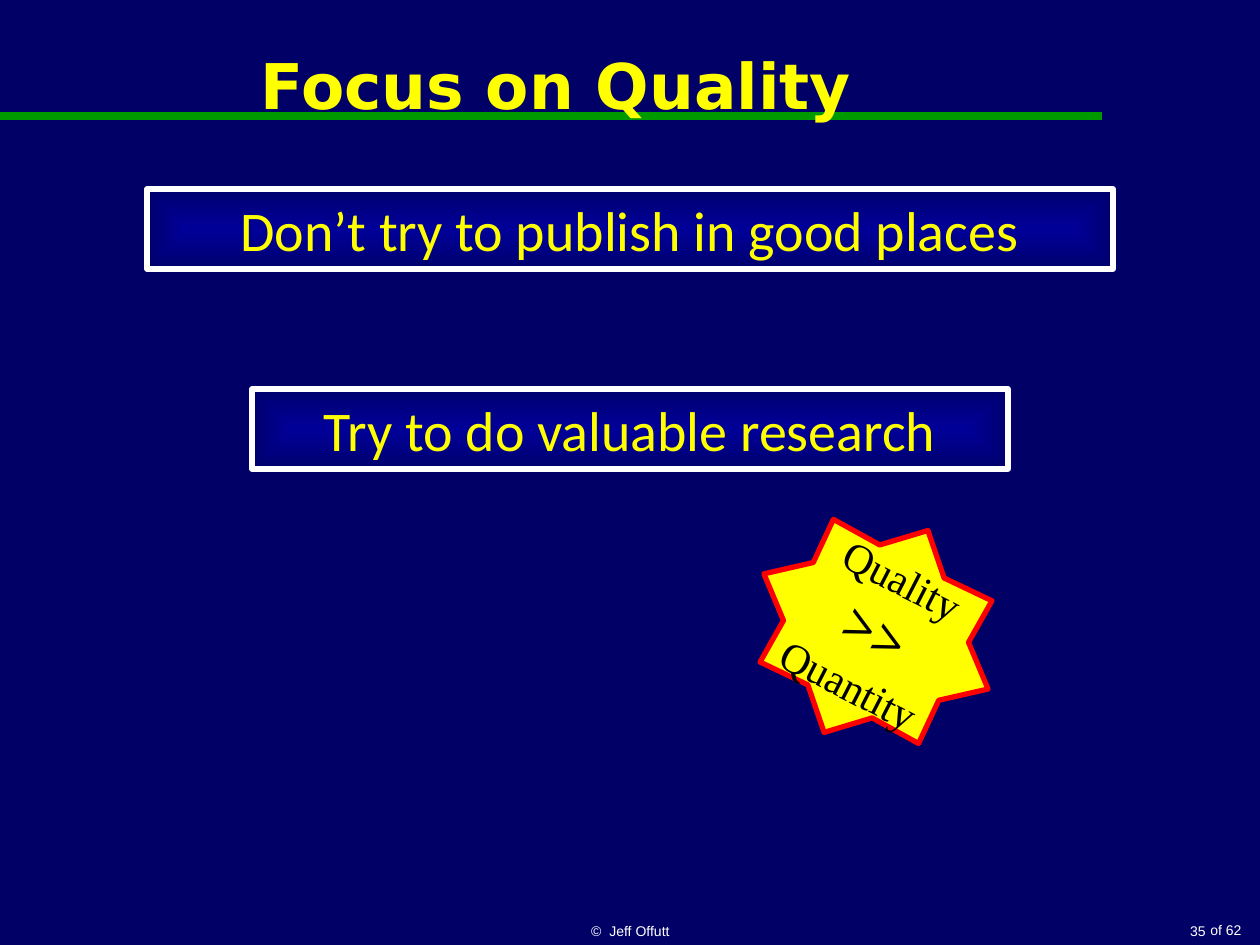
from lxml import etree
from pptx import Presentation
from pptx.dml.color import RGBColor
from pptx.enum.shapes import MSO_CONNECTOR, MSO_SHAPE
from pptx.enum.text import MSO_ANCHOR, PP_ALIGN
from pptx.oxml import parse_xml
from pptx.oxml.ns import qn
from pptx.util import Pt

PX = 914400 / 126
STRAIGHT = MSO_CONNECTOR.STRAIGHT
RECTANGLE, STAR = MSO_SHAPE.RECTANGLE, MSO_SHAPE.STAR_8_POINT
TOP, MIDDLE, BOTTOM = MSO_ANCHOR.TOP, MSO_ANCHOR.MIDDLE, MSO_ANCHOR.BOTTOM
CENTER, RIGHT = PP_ALIGN.CENTER, PP_ALIGN.RIGHT
HEX = {"navy": "000066", "green": "009900", "yellow": "FFFF00", "white": "FFFFFF",
       "red": "FF0000", "black": "000000", "glow": "000099", "edge": "00006D"}
COLOR = {name: RGBColor.from_string(value) for name, value in HEX.items()}
CENTER_PATH = (
    '<a:path xmlns:a="http://schemas.openxmlformats.org/drawingml/2006/main" path="shape">'
    '<a:fillToRect l="50000" t="50000" r="50000" b="50000"/></a:path>')


def px(*lengths):
    return [round(length * PX) for length in lengths]


def write(shape, lines, font, color, align, anchor, wrap=True):
    frame = shape.text_frame
    frame.word_wrap = wrap
    frame.vertical_anchor = anchor
    for index, (text, size, bold) in enumerate(lines):
        para = frame.add_paragraph() if index else frame.paragraphs[0]
        para.alignment = align
        span = para.add_run()
        span.text = text
        span.font.name = font
        span.font.size = Pt(size)
        span.font.bold = bold
        span.font.color.rgb = COLOR[color]


deck = Presentation()
deck.slide_width, deck.slide_height = px(1260, 945)
page = deck.slides.add_slide(deck.slide_layouts[5])
page.background.fill.solid()
page.background.fill.fore_color.rgb = COLOR["navy"]

rule = page.shapes.add_connector(STRAIGHT, *px(0, 116, 1102, 116))
rule.line.color.rgb = COLOR["green"]
rule.line.width = Pt(4.5)
etree.SubElement(rule.element.spPr, qn("a:effectLst"))

title = page.shapes.title
title.left, title.top, title.width, title.height = px(10, 0, 1092, 168)
write(title, [("Focus on Quality", 36, True)], "DejaVu Sans", "yellow", CENTER, MIDDLE)
title.element.getparent().append(title.element)

footers = [
    ("of 62", (1197, 915, 57, 30), RIGHT, TOP, False),
    ("©  Jeff Offutt", (431, 903, 399, 42), CENTER, BOTTOM, True),
    ("35", (998, 903, 220, 42), RIGHT, BOTTOM, True),
]
for text, place, align, anchor, wrap in footers:
    footer = page.shapes.add_textbox(*px(*place))
    write(footer, [(text, 8, False)], "Arial", "white", align, anchor, wrap)

star = page.shapes.add_shape(STAR, *px(750, 518, 252, 227))
star.rotation = 27.2
star.shadow.inherit = False
star.fill.solid()
star.fill.fore_color.rgb = COLOR["yellow"]
star.line.color.rgb = COLOR["red"]
star.line.width = Pt(3)
write(star, [("Quality", 24, False), (">>", 32, True), ("Quantity", 24, False)],
      "Times New Roman", "black", CENTER, MIDDLE)

banners = [("Don’t try to publish in good places", 189, 966),
           ("Try to do valuable research", 389, 756)]
for text, top, width in banners:
    banner = page.shapes.add_shape(RECTANGLE, *px((1260 - width) / 2, top, width, 80))
    banner.shadow.inherit = False
    banner.fill.gradient()
    for stop, color, position in zip(banner.fill.gradient_stops, ("glow", "edge"), (0, 1)):
        stop.color.rgb = COLOR[color]
        stop.position = position
    linear = banner.element.spPr.find(".//" + qn("a:lin"))
    linear.getparent().replace(linear, parse_xml(CENTER_PATH))
    banner.line.color.rgb = COLOR["white"]
    banner.line.width = Pt(3)
    write(banner, [(text, 32, False)], "Calibri", "yellow", CENTER, TOP)

deck.save("out.pptx")
